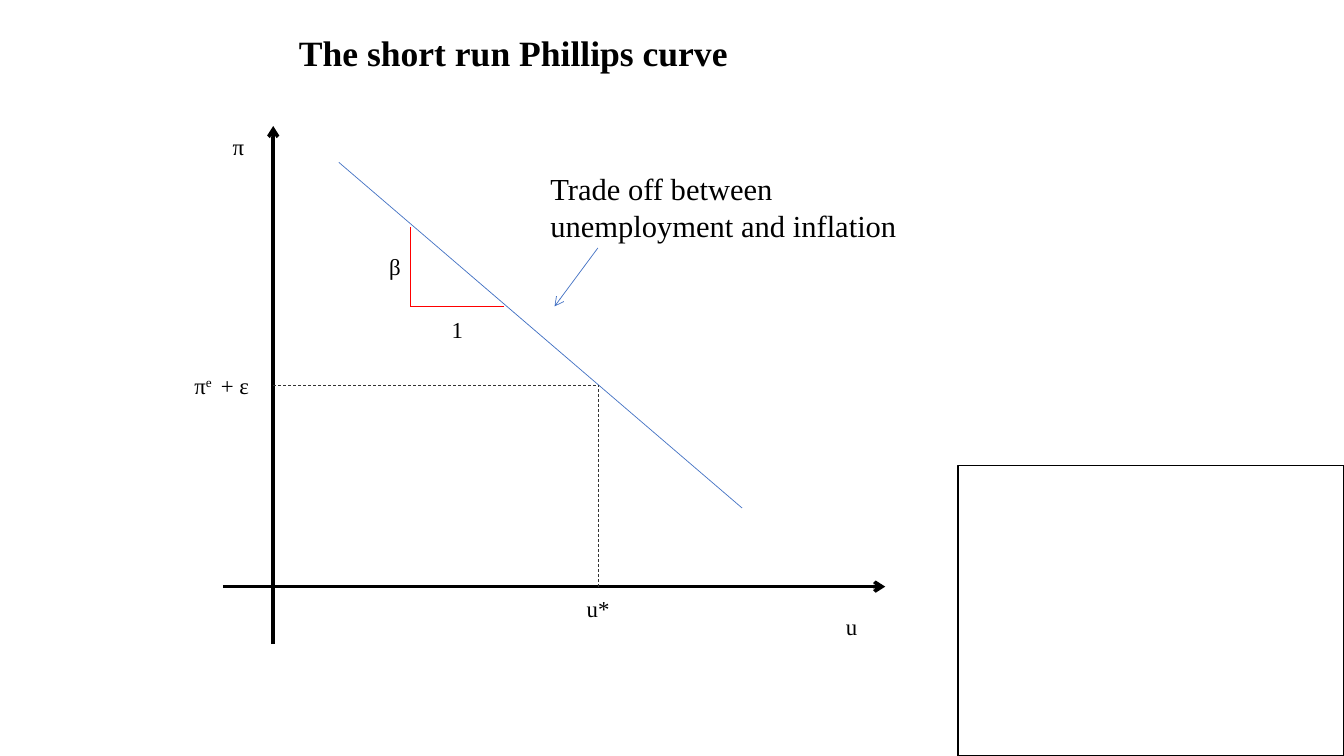
"""Build a slide showing the short run Phillips curve."""
from dataclasses import dataclass

from lxml import etree
from pptx import Presentation
from pptx.dml.color import RGBColor
from pptx.enum.dml import MSO_LINE
from pptx.enum.shapes import MSO_CONNECTOR, MSO_SHAPE
from pptx.enum.text import MSO_ANCHOR, PP_ALIGN
from pptx.oxml.ns import qn
from pptx.slide import Slide
from pptx.text.text import TextFrame
from pptx.util import Inches, Pt

STRAIGHT = MSO_CONNECTOR.STRAIGHT
RECTANGLE = MSO_SHAPE.RECTANGLE
DASH = MSO_LINE.DASH
MIDDLE = MSO_ANCHOR.MIDDLE
CENTER = PP_ALIGN.CENTER

WIDTH, HEIGHT = Inches(13.33), Inches(7.5)
COLUMN, ROW = WIDTH / 133.3, HEIGHT / 75
FONT = "Times New Roman"
COLORS = {"ink": "000000", "curve": "4472C4", "slope": "FF0000", "guide": "333333"}

AXIS_X, AXIS_Y = 27.1, 58.2
NATURAL_U, EXPECTED_PI = 59.3, 38.2
SLOPE_X, SLOPE_Y = 40.7, 30.4


@dataclass
class Segment:
    start: tuple[float, float]
    end: tuple[float, float]
    color: str
    points: float = 0.5
    arrow: bool = False
    dashed: bool = False


@dataclass
class Label:
    box: tuple[float, float, float, float]
    paragraphs: list[list[tuple[str, int]]]
    size: float = 16.3


SEGMENTS = [
    Segment((AXIS_X, 63.9), (AXIS_X, 12.5), "ink", 2.5, arrow=True),
    Segment((22.1, AXIS_Y), (87.8, AXIS_Y), "ink", 2.5, arrow=True),
    Segment((33.6, 16.1), (73.6, 50.4), "curve"),
    Segment((SLOPE_X, 22.5), (SLOPE_X, SLOPE_Y), "slope"),
    Segment((50, SLOPE_Y), (SLOPE_X, SLOPE_Y), "slope"),
    Segment((AXIS_X, EXPECTED_PI), (NATURAL_U, EXPECTED_PI), "guide", dashed=True),
    Segment((NATURAL_U, AXIS_Y), (NATURAL_U, EXPECTED_PI), "guide", dashed=True),
    Segment((NATURAL_U, 24.6), (55, 30.4), "curve", arrow=True),
]

LABELS = [
    Label((22.1, 12.7, 3.3, 3.8), [[("π", 0)]]),
    Label((82.9, 60.3, 3.2, 3.8), [[("u", 0)]]),
    Label((37.6, 24.6, 3.2, 3.8), [[("β", 0)]]),
    Label((43.8, 30.8, 3.2, 3.8), [[("1", 0)]]),
    Label((18.3, 36.4, 7.8, 3.8), [[("π", 0), ("e ", 30), (" + ε", 0)]]),
    Label((57.2, 58.5, 4.4, 3.8), [[("u*", 0)]]),
    Label((53.6, 16.4, 37.4, 8.3),
          [[("Trade off between", 0)], [("unemployment and inflation", 0)]], 21.8),
]


def color(name: str) -> RGBColor:
    return RGBColor.from_string(COLORS[name])


def place(left: float, top: float, width: float, height: float) -> tuple[int, ...]:
    return (round(left * COLUMN), round(top * ROW),
            round(width * COLUMN), round(height * ROW))


def write_paragraphs(frame: TextFrame, paragraphs: list[list[tuple[str, int]]],
                     size: float, bold: bool = False) -> None:
    for index, pieces in enumerate(paragraphs):
        paragraph = frame.add_paragraph() if index else frame.paragraphs[0]
        for words, baseline in pieces:
            run = paragraph.add_run()
            run.text = words
            run.font.name = FONT
            run.font.size = Pt(size)
            run.font.bold = bold
            run.font.color.rgb = color("ink")
            if baseline:
                run.font._element.set("baseline", str(baseline * 1000))


def draw_title(slide: Slide, words: str) -> None:
    heading = slide.shapes.title
    heading.left, heading.top, heading.width, heading.height = place(9.4, 1.1, 83.1, 8.1)
    frame = heading.text_frame
    frame.vertical_anchor = MIDDLE
    frame.paragraphs[0].alignment = CENTER
    write_paragraphs(frame, [[(words, 0)]], 25.4, bold=True)


def draw_segment(slide: Slide, segment: Segment) -> None:
    begin = place(*segment.start, 0, 0)[:2]
    finish = place(*segment.end, 0, 0)[:2]
    connector = slide.shapes.add_connector(STRAIGHT, *begin, *finish)
    connector.line.color.rgb = color(segment.color)
    connector.line.width = Pt(segment.points)
    if segment.dashed:
        connector.line.dash_style = DASH
    if segment.arrow:
        outline = connector.line._get_or_add_ln()
        etree.SubElement(outline, qn("a:tailEnd"), type="arrow")
    etree.SubElement(connector._element.spPr, qn("a:effectLst"))


def draw_label(slide: Slide, label: Label) -> None:
    frame = slide.shapes.add_textbox(*place(*label.box)).text_frame
    frame.word_wrap = False
    write_paragraphs(frame, label.paragraphs, label.size)


def draw_empty_panel(slide: Slide) -> None:
    panel = slide.shapes.add_shape(RECTANGLE, *place(95, 46.2, 38.3, 28.8))
    panel.shadow.inherit = False
    panel.fill.background()
    panel.line.color.rgb = color("ink")
    panel.line.width = Pt(1)


def main() -> None:
    deck = Presentation()
    deck.slide_width, deck.slide_height = WIDTH, HEIGHT
    slide = deck.slides.add_slide(deck.slide_layouts.get_by_name("Title Only"))
    draw_title(slide, "The short run Phillips curve")
    for segment in SEGMENTS:
        draw_segment(slide, segment)
    for label in LABELS:
        draw_label(slide, label)
    draw_empty_panel(slide)
    deck.save("out.pptx")


if __name__ == "__main__":
    main()
